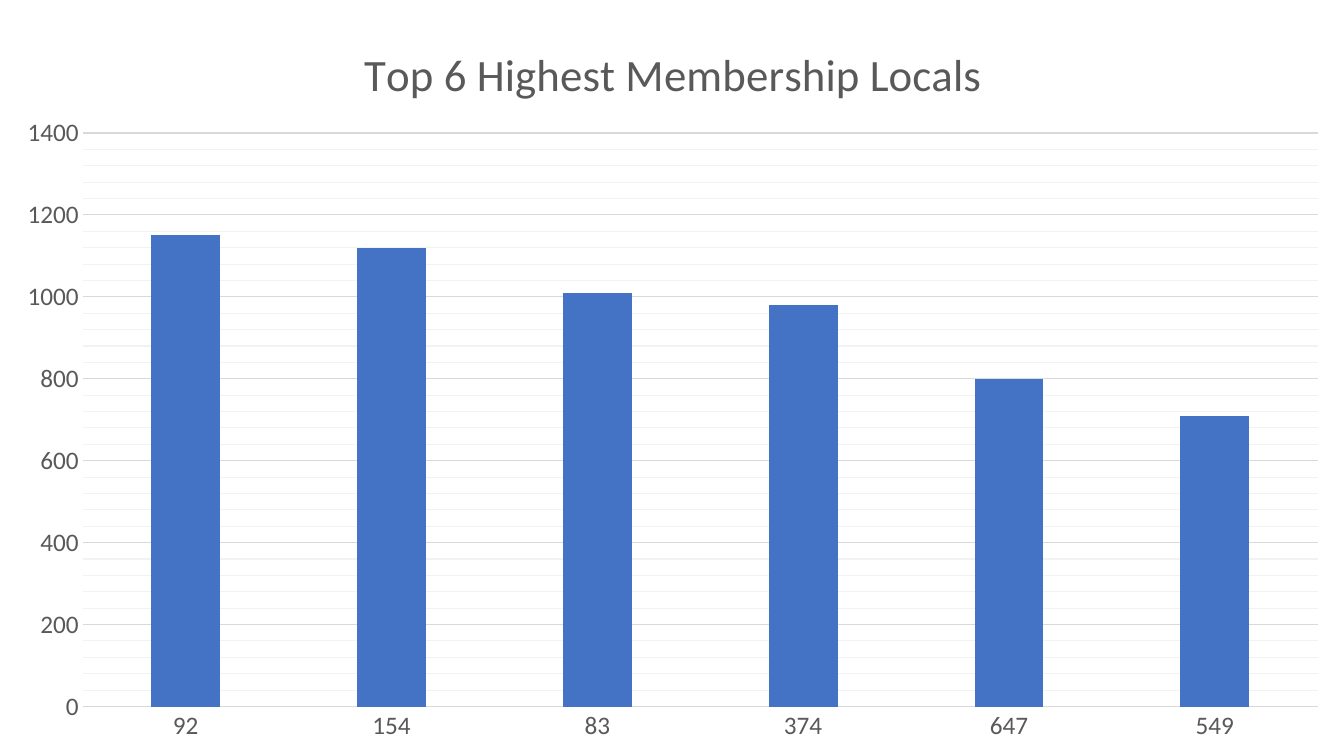
from typing import NamedTuple

from lxml.etree import SubElement, _Element as Element
from pptx import Presentation
from pptx.chart.data import CategoryChartData
from pptx.dml.color import RGBColor
from pptx.enum.chart import XL_CHART_TYPE as ChartType, XL_TICK_MARK as TickMark
from pptx.oxml.ns import qn
from pptx.text.text import Font, TextFrame
from pptx.util import Inches, Pt

BLUE = RGBColor(0x44, 0x72, 0xC4)
DARK_GRAY = RGBColor(0x59, 0x59, 0x59)
GRID_GRAY = RGBColor(0xD9, 0xD9, 0xD9)
MINOR_GRAY = RGBColor(0xF2, 0xF2, 0xF2)
FONT_NAME = "Calibri"
SLIDE_WIDTH, SLIDE_HEIGHT = Inches(13.33), Inches(7.5)


class Local(NamedTuple):
    number: str
    members: int


class Placement(NamedTuple):
    x: float
    y: float
    w: float | None = None
    h: float | None = None


LOCALS = [
    Local("92", 1150),
    Local("154", 1120),
    Local("83", 1010),
    Local("374", 980),
    Local("647", 800),
    Local("549", 710),
]
HEADING_PLACE = Placement(0.265, 0.046)
BARS_PLACE = Placement(0.82 / 13.33, 1.32 / 7.5, 12.25 / 13.33, 5.69 / 7.5)


def format_font(font: Font, size: float, color: RGBColor = DARK_GRAY) -> None:
    font.name = FONT_NAME
    font.size = Pt(size)
    font.bold = False
    font.color.rgb = color


def write_text(frame: TextFrame, text: str, *, size: float, color: RGBColor = DARK_GRAY) -> None:
    frame.text = text
    format_font(frame.paragraphs[0].runs[0].font, size, color)


def place(parent: Element, placement: Placement, index: int) -> None:
    for previous in parent.findall(qn("c:layout")):
        parent.remove(previous)
    layout = SubElement(parent, qn("c:layout"))
    parent.insert(index, layout)
    manual = SubElement(layout, qn("c:manualLayout"))
    settings = {"xMode": "edge", "yMode": "edge", **placement._asdict()}
    if placement.w is not None:
        settings = {"layoutTarget": "inner", **settings}
    for tag, value in settings.items():
        if value is not None:
            SubElement(manual, qn(f"c:{tag}")).set("val", str(value))


presentation = Presentation()
presentation.slide_width, presentation.slide_height = SLIDE_WIDTH, SLIDE_HEIGHT
slide = presentation.slides.add_slide(presentation.slide_layouts[6])

membership = CategoryChartData()
membership.categories = [local.number for local in LOCALS]
membership.add_series("Series 1", [local.members for local in LOCALS])
chart = slide.shapes.add_chart(
    ChartType.COLUMN_CLUSTERED, 0, 0, SLIDE_WIDTH, SLIDE_HEIGHT, membership
).chart
chart.has_legend = False
format_font(chart.font, 18)

heading = chart.chart_title
write_text(heading.text_frame, "Top 6 Highest Membership Locals", size=32)
heading.include_in_layout = False
place(heading._element, HEADING_PLACE, 1)
place(chart._chartSpace.chart.plotArea, BARS_PLACE, 0)

bars = chart.plots[0]
bars.gap_width = 199
bars.vary_by_categories = False
bars.series[0].format.fill.solid()
bars.series[0].format.fill.fore_color.rgb = BLUE

local_axis, member_axis = chart.category_axis, chart.value_axis
for axis in (local_axis, member_axis):
    axis.major_tick_mark = axis.minor_tick_mark = TickMark.NONE
    format_font(axis.tick_labels.font, 18)

member_axis.minimum_scale, member_axis.maximum_scale = 0, 1400
member_axis.major_unit, member_axis.minor_unit = 200, 40
member_axis.has_major_gridlines = member_axis.has_minor_gridlines = True
member_axis.format.line.fill.background()

for line, color in (
    (local_axis.format.line, GRID_GRAY),
    (member_axis.major_gridlines.format.line, GRID_GRAY),
):
    line.color.rgb = color
    line.width = Pt(0.75)

minor_gridlines = member_axis._element.find(qn("c:minorGridlines"))
minor_properties = SubElement(minor_gridlines, qn("c:spPr"))
minor_line = SubElement(minor_properties, qn("a:ln"), w=str(Pt(0.75)))
minor_fill = SubElement(minor_line, qn("a:solidFill"))
SubElement(minor_fill, qn("a:srgbClr"), val=str(MINOR_GRAY))

presentation.save("out.pptx")
